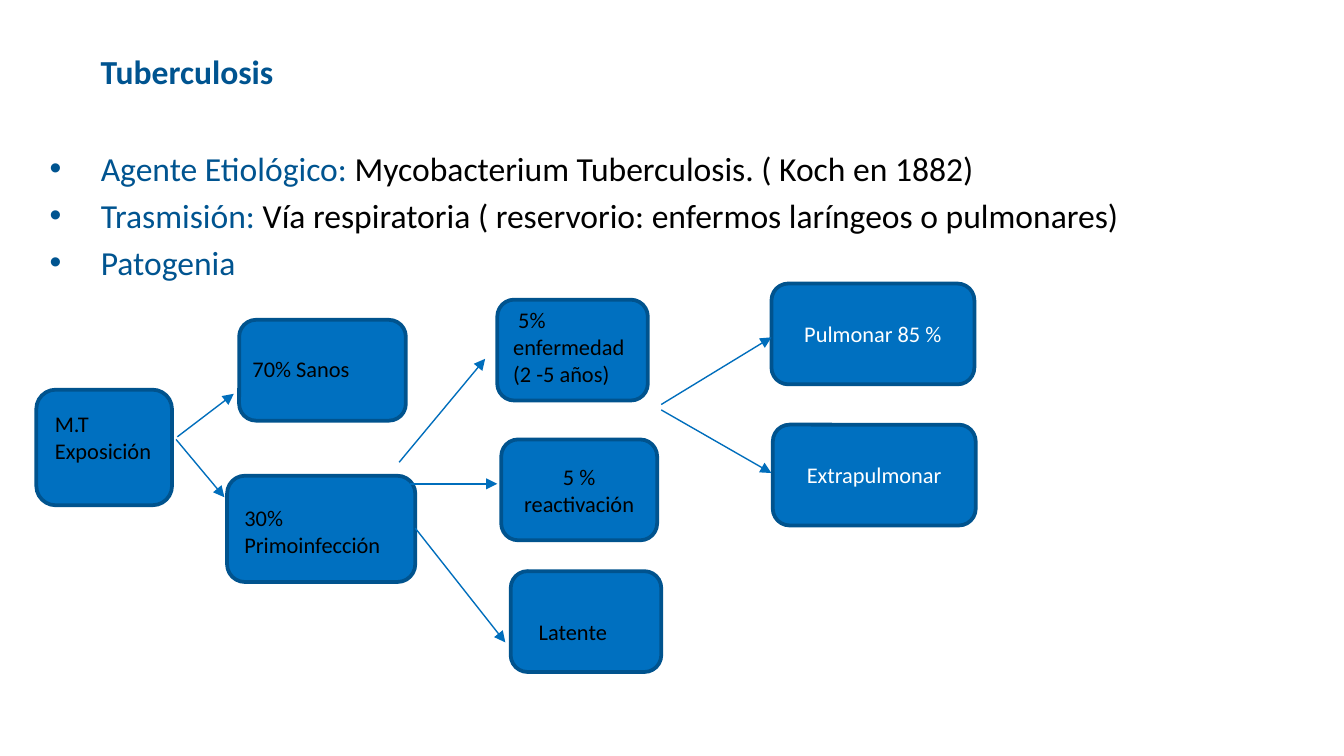
from pptx import Presentation
from pptx.dml.color import RGBColor
from pptx.enum.shapes import MSO_CONNECTOR as Connector, MSO_SHAPE as Shape
from pptx.enum.text import MSO_ANCHOR as Anchor, PP_ALIGN as Align
from pptx.oxml.ns import qn
from pptx.util import Inches, Pt
from lxml.etree import SubElement

COLORS = {"white": "FFFFFF", "black": "000000", "heading": "005490",
          "fill": "0070C0", "border": "00538E", "arrow": "006EBC"}
FONT = "Calibri"
SLIDE_WIDTH = 10
SLIDE_HEIGHT = SLIDE_WIDTH * 9 / 16

# Content: places are left, top, width, height in inches
TITLE = (" Tuberculosis", (0.43, 0.05, 1.87, 0.95))
BODY_PLACE = (0.3, 1.06, 9.05, 3.89)
BULLETS = [
    ("Agente Etiológico: ", "Mycobacterium Tuberculosis. ( Koch en 1882)"),
    ("Trasmisión: ", "Vía respiratoria ( reservorio: enfermos laríngeos o pulmonares)"),
    ("Patogenia", ""),
]
# Nodes whose label is a separate text box: node place, label lines, label place
LABELLED_NODES = [
    ((0.27, 2.9, 1.01, 0.86), ["M.T", "Exposición"], (0.31, 3, 1.01, 0.5)),
    ((1.78, 2.38, 1.24, 0.75), ["70% Sanos"], (1.78, 2.59, 1.25, 0.3)),
    ((1.69, 3.54, 1.4, 0.79), ["30% Primoinfección"], (1.72, 3.7, 1.37, 0.5)),
    ((3.7, 2.23, 1.12, 0.75), [" 5% enfermedad (2 -5 años)"], (3.72, 2.23, 1.16, 0.71)),
    ((3.8, 4.25, 1.12, 0.75), ["Latente"], (3.91, 4.55, 0.86, 0.3)),
]
# Nodes that hold their own text: place, text, colour, side inset, top inset
TEXT_NODES = [
    ((5.74, 2.11, 1.51, 0.75), "Pulmonar 85 %", "white", 0.1, 0.05),
    ((5.75, 3.16, 1.51, 0.75), "Extrapulmonar", "white", 0.1, 0.05),
    ((3.73, 3.27, 1.16, 0.75), "5 % reactivación", "black", 0.07, 0.04),
]
ARROWS = [
    ((1.32, 3.25), (1.74, 2.93)),
    ((1.31, 3.27), (1.67, 3.7)),
    ((2.97, 3.44), (3.61, 2.67)),
    ((3.05, 3.6), (3.7, 3.6)),
    ((3.09, 3.93), (3.76, 4.78)),
    ((4.92, 3.01), (5.74, 2.51)),
    ((4.92, 3.05), (5.74, 3.52)),
]


def color(name):
    return RGBColor.from_string(COLORS[name])


def inches(values):
    return [Inches(value) for value in values]


def write(para, text, size=12, ink="black", bold=False, align=Align.LEFT):
    para.alignment = align
    span = para.add_run()
    span.text = text
    span.font.name = FONT
    span.font.size = Pt(size)
    span.font.bold = bold
    span.font.color.rgb = color(ink)


def paint(shape, name):
    shape.fill.solid()
    shape.fill.fore_color.rgb = color(name)


def set_frame(box, side=0.1, top=0.05, anchor=Anchor.TOP):
    frame = box.text_frame
    frame.word_wrap = True
    frame.vertical_anchor = anchor
    frame.margin_left = frame.margin_right = Inches(side)
    frame.margin_top = frame.margin_bottom = Inches(top)
    return frame


def add_paragraph(frame, index):
    return frame.add_paragraph() if index else frame.paragraphs[0]


def add_text_box(page, place):
    return page.shapes.add_textbox(*inches(place))


def add_node(page, place):
    node = page.shapes.add_shape(Shape.ROUNDED_RECTANGLE, *inches(place))
    node.shadow.inherit = False
    paint(node, "fill")
    node.line.color.rgb = color("border")
    node.line.width = Pt(2)
    return node


def add_bullet(para, indent):
    props = para._p.get_or_add_pPr()
    props.set("marL", str(Inches(indent)))
    props.set("indent", str(-Inches(indent)))
    SubElement(props, qn("a:buFont")).set("typeface", "Arial")
    SubElement(props, qn("a:buChar")).set("char", "•")


def add_arrow(page, start, end):
    arrow = page.shapes.add_connector(Connector.STRAIGHT, *inches(start + end))
    arrow.line.color.rgb = color("arrow")
    arrow.line.width = Pt(0.75)
    SubElement(arrow.line._get_or_add_ln(), qn("a:tailEnd")).set("type", "triangle")
    SubElement(arrow._element.spPr, qn("a:effectLst"))


deck = Presentation()
deck.slide_width, deck.slide_height = inches((SLIDE_WIDTH, SLIDE_HEIGHT))
page = deck.slides.add_slide(deck.slide_layouts[6])

# Bulleted text
body = add_text_box(page, BODY_PLACE)
paint(body, "white")
frame = set_frame(body, side=0.07, top=0.04)
for index, (term, detail) in enumerate(BULLETS):
    para = add_paragraph(frame, index)
    if index:
        para.space_before = Pt(3.6)
    add_bullet(para, 0.38)
    write(para, term, size=18, ink="heading")
    if detail:
        write(para, detail, size=18)

# Diagram nodes
for place, lines, label_place in LABELLED_NODES:
    add_node(page, place)
    frame = set_frame(add_text_box(page, label_place))
    for index, line in enumerate(lines):
        write(add_paragraph(frame, index), line)

for place, text, ink, side, top in TEXT_NODES:
    frame = set_frame(add_node(page, place), side, top, Anchor.MIDDLE)
    write(frame.paragraphs[0], text, ink=ink, align=Align.CENTER)

# Arrows
for start, end in ARROWS:
    add_arrow(page, start, end)

# Title
text, place = TITLE
frame = set_frame(add_text_box(page, place), anchor=Anchor.MIDDLE)
write(frame.paragraphs[0], text, size=18, ink="heading", bold=True, align=Align.CENTER)

deck.save("out.pptx")
